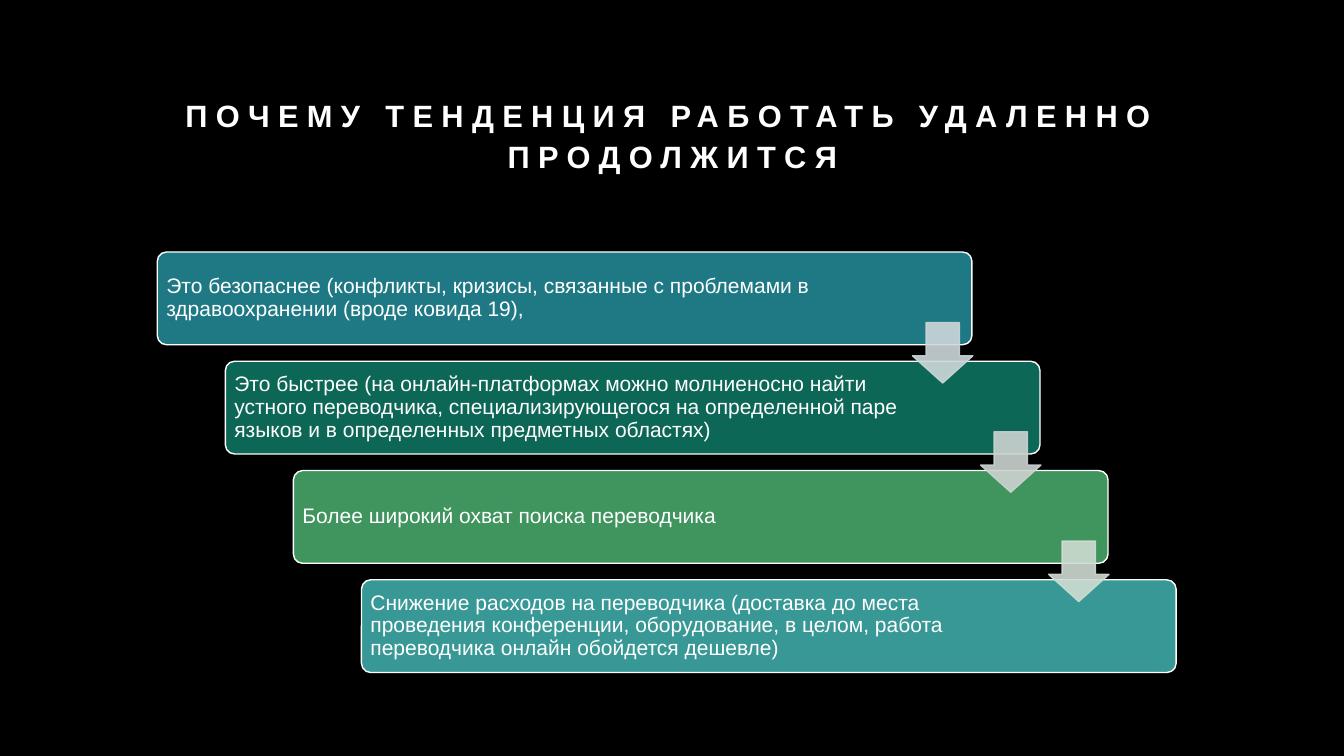
import pptx
import pptx.util
import pptx.dml.color
import pptx.enum.shapes
import pptx.enum.text
import pptx.oxml
import pptx.oxml.ns

Inches, Pt = pptx.util.Inches, pptx.util.Pt
RGB = pptx.dml.color.RGBColor.from_string
SHAPE = pptx.enum.shapes.MSO_SHAPE
ANCHOR = pptx.enum.text.MSO_ANCHOR
ALIGN = pptx.enum.text.PP_ALIGN

THEME = {
    "font": "Arial", "back": "000000", "text": "FFFFFF",
    "title_size": 22, "title_tracking": 6, "step_size": 15, "line": 1,
    "arrow_opacity": 90,
}

# Staircase grid: first corner, offset per step, and sizes in inches
LEFT, TOP = 1.56, 2.5
STEP_X, STEP_Y = 0.675, 1.084
STEP_W, STEP_H = 8.08, 0.92
INSET = 0.03
ARROW_X, ARROW_Y, ARROW_SIZE = 7.49, 0.7, 0.6

# Wording, fill, text width, colour of the arrow to the next step
STEPS = [
    ("Это безопаснее (конфликты, кризисы, связанные с проблемами в "
     "здравоохранении (вроде ковида 19),", "1F7985", 7.02, "CDD7D9"),
    ("Это быстрее (на онлайн-платформах можно молниеносно найти устного "
     "переводчика, специализирующегося на определенной паре языков и в "
     "определенных предметных областях)", "0D6756", 6.76, "CCD3D1"),
    ("Более широкий охват поиска переводчика", "40945E", 6.77, "CFDCD2"),
    ("Снижение расходов на переводчика (доставка до места проведения "
     "конференции, оборудование, в целом, работа переводчика онлайн обойдется "
     "дешевле)", "389896", 6.76, None),
]

deck = pptx.Presentation()
deck.slide_width, deck.slide_height = Inches(13.33), Inches(7.5)
page = deck.slides.add_slide(deck.slide_layouts[6])
page.background.fill.solid()
page.background.fill.fore_color.rgb = RGB(THEME["back"])


def add_shape(kind, left, top, width, height, fill, line, adjustments):
    shape = page.shapes.add_shape(
        kind, Inches(left), Inches(top), Inches(width), Inches(height))
    shape.shadow.inherit = False
    shape.fill.solid()
    shape.fill.fore_color.rgb = RGB(fill)
    shape.line.color.rgb = RGB(line)
    shape.line.width = Pt(THEME["line"])
    for index, value in enumerate(adjustments):
        shape.adjustments[index] = value
    return shape


def add_text(words, left, top, width, height, size, spacing, anchor):
    box = page.shapes.add_textbox(
        Inches(left), Inches(top), Inches(width), Inches(height))
    box.text_frame.word_wrap = True
    box.text_frame.vertical_anchor = anchor
    para = box.text_frame.paragraphs[0]
    para.line_spacing = spacing
    span = para.add_run()
    span.text = words
    span.font.name = THEME["font"]
    span.font.size = Pt(size)
    span.font.color.rgb = RGB(THEME["text"])
    return box.text_frame


# Title
title = add_text("ПОЧЕМУ ТЕНДЕНЦИЯ РАБОТАТЬ УДАЛЕННО ПРОДОЛЖИТСЯ",
                 1.67, 0.83, 10, 0.95, THEME["title_size"], 1.1, ANCHOR.BOTTOM)
title_para = title.paragraphs[0]
title_para.alignment = ALIGN.CENTER
title_span = title_para.runs[0]
title_span.font.bold = True
title_span.font._element.set("spc", str(THEME["title_tracking"] * 100))

# Steps
for number, (words, fill, text_width, _) in enumerate(STEPS):
    left, top = LEFT + number * STEP_X, TOP + number * STEP_Y
    add_shape(SHAPE.ROUNDED_RECTANGLE, left, top, STEP_W, STEP_H,
              fill, THEME["text"], [0.1])
    frame = add_text(words, left + INSET, top + INSET, text_width,
                     STEP_H - 2 * INSET, THEME["step_size"], 0.9, ANCHOR.MIDDLE)
    frame.margin_left = frame.margin_right = Inches(0.06)
    frame.margin_top = frame.margin_bottom = Inches(0.06)

# Arrows between the steps, slightly transparent
for number, (_, _, _, tint) in enumerate(STEPS[:-1]):
    arrow = add_shape(SHAPE.DOWN_ARROW, LEFT + number * STEP_X + ARROW_X,
                      TOP + number * STEP_Y + ARROW_Y, ARROW_SIZE, ARROW_SIZE,
                      tint, tint, [0.55, 0.45])
    for color in arrow.element.spPr.iter(pptx.oxml.ns.qn("a:srgbClr")):
        alpha = pptx.oxml.parse_xml(
            f'<a:alpha {pptx.oxml.ns.nsdecls("a")} '
            f'val="{THEME["arrow_opacity"] * 1000}"/>')
        color.append(alpha)

deck.save("out.pptx")
